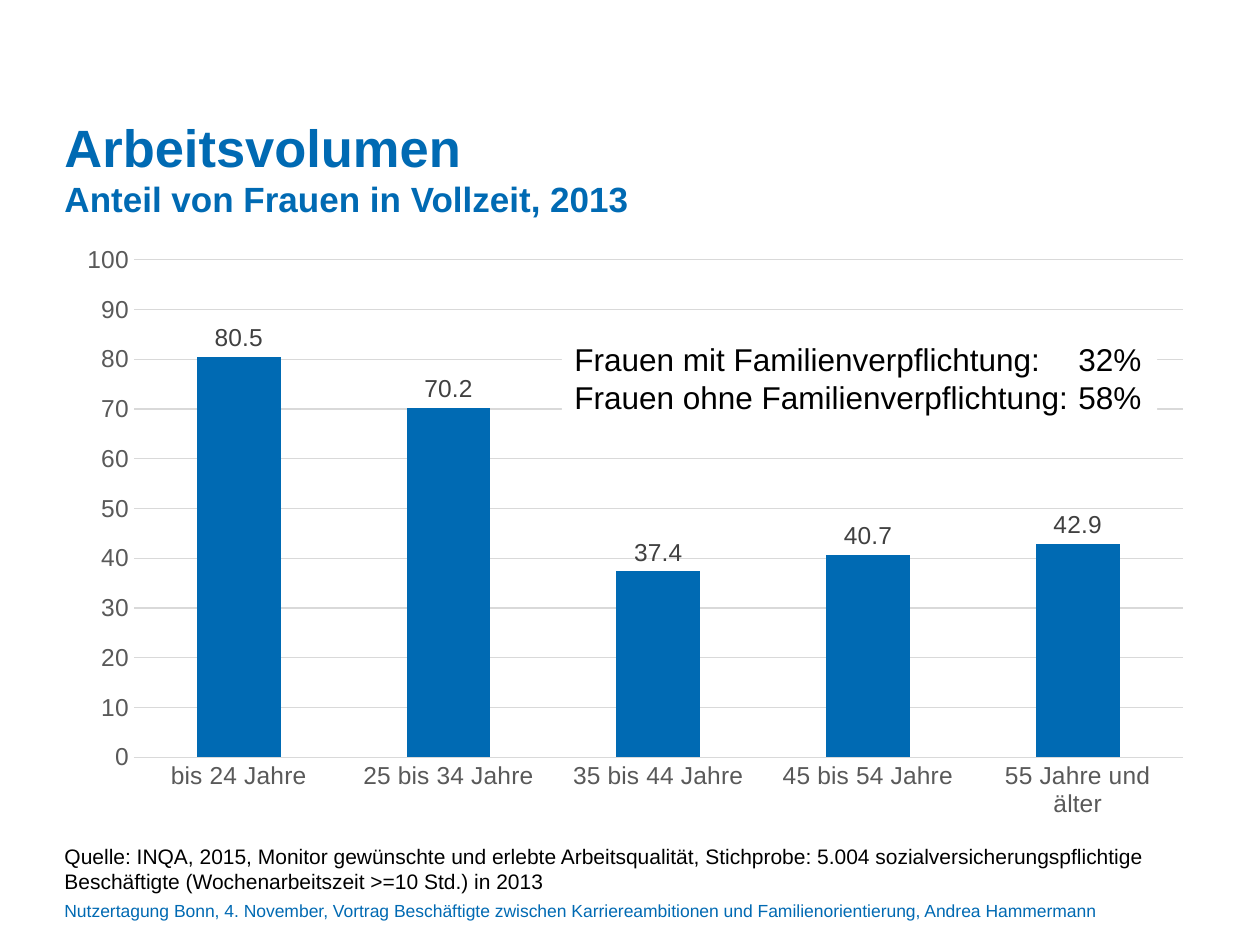
from lxml.etree import SubElement
from pptx import Presentation
from pptx.chart.data import CategoryChartData
from pptx.dml.color import RGBColor
from pptx.enum.chart import XL_CHART_TYPE, XL_LABEL_POSITION, XL_TICK_MARK
from pptx.enum.shapes import MSO_SHAPE
from pptx.enum.text import MSO_ANCHOR, MSO_AUTO_SIZE, PP_ALIGN
from pptx.oxml.ns import qn
from pptx.util import Cm, Pt

BLUE = RGBColor(0x00, 0x6A, 0xB3)
BLACK = RGBColor(0x00, 0x00, 0x00)
WHITE = RGBColor(0xFF, 0xFF, 0xFF)
AXIS_GREY = RGBColor(0x59, 0x59, 0x59)
LABEL_GREY = RGBColor(0x40, 0x40, 0x40)
GRID_GREY = RGBColor(0xD9, 0xD9, 0xD9)
LEFT, WIDTH = Cm(1.3), Cm(23)


def style(font, size, color, bold=False):
    font.name = "Arial"
    font.size = Pt(size)
    font.bold = bold
    font.color.rgb = color


def prepare_frame(frame, margin=0):
    frame.margin_left = frame.margin_right = Cm(margin)
    frame.margin_top = frame.margin_bottom = Cm(margin / 2)
    frame.auto_size = MSO_AUTO_SIZE.NONE
    frame.vertical_anchor = MSO_ANCHOR.TOP
    frame.word_wrap = True
    frame.paragraphs[0].alignment = PP_ALIGN.LEFT
    return frame


prs = Presentation()
prs.slide_width, prs.slide_height = Cm(25.4), Cm(19.05)
slide = prs.slides.add_slide(prs.slide_layouts[1])
title, source = slide.placeholders

# Title and subtitle
title.left, title.top, title.width, title.height = LEFT, Cm(2.31), WIDTH, Cm(2.13)
heading = prepare_frame(title.text_frame).paragraphs[0]
run = heading.add_run()
run.text = "Arbeitsvolumen"
style(run.font, 30, BLUE, True)
heading.add_line_break()
run = heading.add_run()
run.text = "Anteil von Frauen in Vollzeit, 2013"
style(run.font, 20, BLUE, True)

# Source note
source.left, source.top, source.width, source.height = LEFT, Cm(17), WIDTH, Cm(0.51)
note = prepare_frame(source.text_frame).paragraphs[0]
note.space_before = Pt(0)
note_props = note._p.get_or_add_pPr()
note_props.set("marL", "0")
note_props.set("indent", "0")
SubElement(note_props, qn("a:buNone"))
run = note.add_run()
run.text = (
    "Quelle: INQA, 2015, Monitor gewünschte und erlebte Arbeitsqualität, "
    "Stichprobe: 5.004 sozialversicherungspflichtige Beschäftigte "
    "(Wochenarbeitszeit >=10 Std.) in 2013"
)
style(run.font, 12, BLACK)

# Share of women working full time, by age
shares = CategoryChartData(number_format="0.0")
shares.categories = ["bis 24 Jahre", "25 bis 34 Jahre", "35 bis 44 Jahre",
                     "45 bis 54 Jahre", "55 Jahre und älter"]
shares.add_series("Series 1", [80.5, 70.2, 37.4, 40.7, 42.9])
chart = slide.shapes.add_chart(
    XL_CHART_TYPE.COLUMN_CLUSTERED, LEFT, Cm(4.72), WIDTH, Cm(12), shares
).chart
chart.has_title = False
chart.has_legend = False
style(chart.font, 14, BLACK)

plot = chart.plots[0]
plot.gap_width = 150
plot.vary_by_categories = False
columns = plot.series[0]
columns.format.fill.solid()
columns.format.fill.fore_color.rgb = BLUE
labels = columns.data_labels
labels.show_value = True
labels.number_format = "0.0"
labels.number_format_is_linked = False
labels.position = XL_LABEL_POSITION.OUTSIDE_END
style(labels.font, 14, LABEL_GREY)

ages, percent = chart.category_axis, chart.value_axis
for axis in (ages, percent):
    axis.major_tick_mark = axis.minor_tick_mark = XL_TICK_MARK.NONE
    style(axis.tick_labels.font, 14, AXIS_GREY)
percent.minimum_scale, percent.maximum_scale, percent.major_unit = 0, 100, 10
percent.tick_labels.number_format = "0"
percent.tick_labels.number_format_is_linked = False
percent.format.line.fill.background()
percent.has_major_gridlines = True
for line in (ages.format.line, percent.major_gridlines.format.line):
    line.color.rgb = GRID_GREY
    line.width = Pt(0.75)

# Event line at the foot
footer = slide.shapes.add_textbox(LEFT, Cm(18.14), Cm(21.6), Cm(0.56))
run = prepare_frame(footer.text_frame).paragraphs[0].add_run()
run.text = (
    "Nutzertagung Bonn, 4. November, Vortrag Beschäftigte zwischen "
    "Karriereambitionen und Familienorientierung, Andrea Hammermann"
)
style(run.font, 10, BLUE)

# Comparison by family duties, over the chart
comparison = slide.shapes.add_shape(
    MSO_SHAPE.RECTANGLE, Cm(11.33), Cm(6.73), Cm(12), Cm(1.8)
)
comparison.shadow.inherit = False
comparison.fill.solid()
comparison.fill.fore_color.rgb = WHITE
comparison.line.fill.background()
frame = prepare_frame(comparison.text_frame, 0.25)
frame.word_wrap = False
frame.auto_size = MSO_AUTO_SIZE.SHAPE_TO_FIT_TEXT
for i, (group, share) in enumerate([("mit", "32%"), ("ohne", "58%")]):
    row = frame.add_paragraph() if i else frame.paragraphs[0]
    row.alignment = PP_ALIGN.LEFT
    tabs = SubElement(row._p.get_or_add_pPr(), qn("a:tabLst"))
    SubElement(tabs, qn("a:tab"), pos=str(Cm(10.16)), algn="l")
    run = row.add_run()
    run.text = f"Frauen {group} Familienverpflichtung: \t{share}"
    style(run.font, 18, BLACK)

prs.save("out.pptx")
